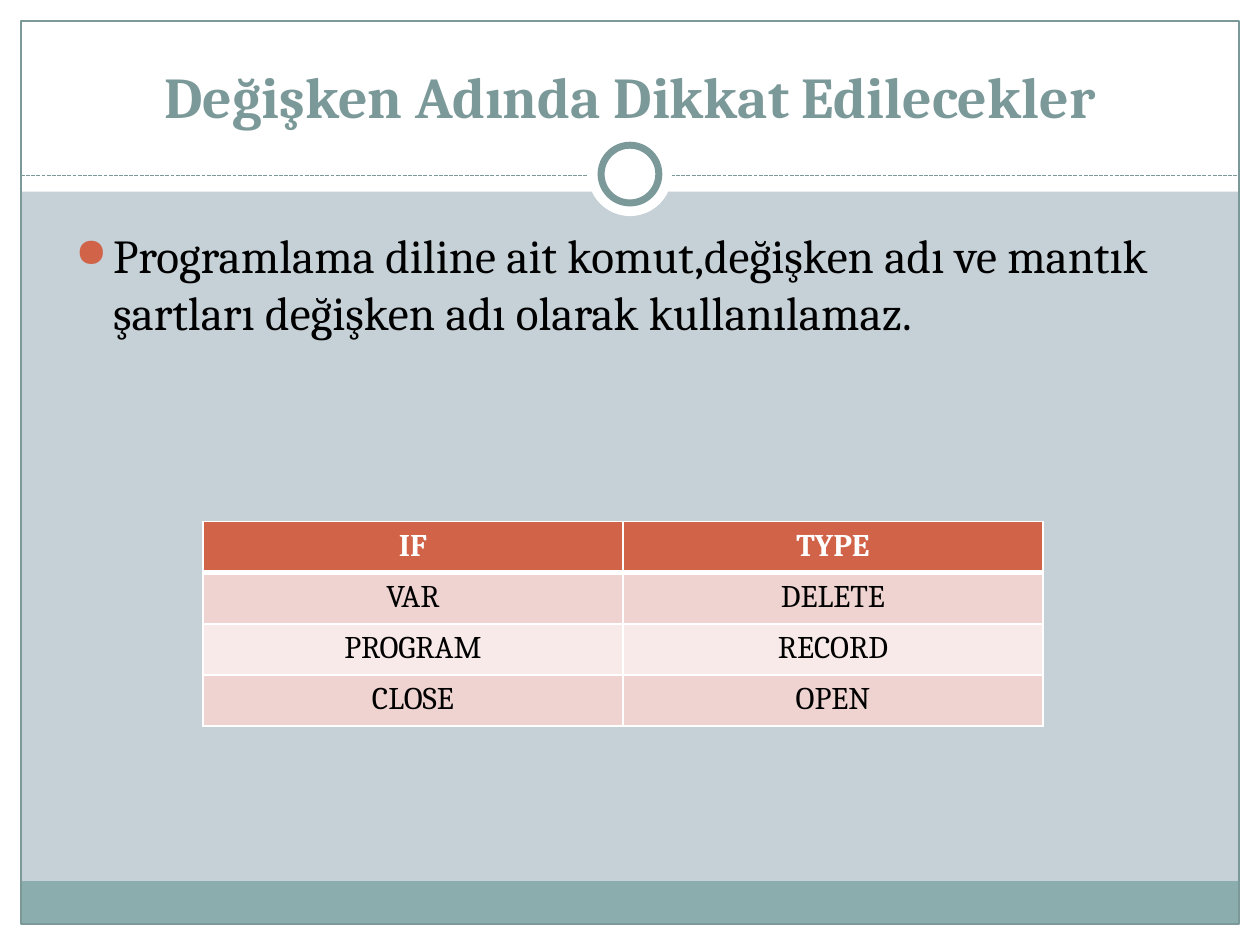
from dataclasses import dataclass

from lxml import etree
from pptx import Presentation
from pptx.dml.color import RGBColor
from pptx.enum.dml import MSO_LINE
from pptx.enum.shapes import MSO_CONNECTOR, MSO_SHAPE
from pptx.enum.text import MSO_ANCHOR, MSO_AUTO_SIZE, PP_ALIGN
from pptx.oxml.ns import qn
from pptx.util import Pt

RECT, OVAL = MSO_SHAPE.RECTANGLE, MSO_SHAPE.OVAL
STRAIGHT, DASH = MSO_CONNECTOR.STRAIGHT, MSO_LINE.SQUARE_DOT
LEFT, CENTER = PP_ALIGN.LEFT, PP_ALIGN.CENTER
TOP, BOTTOM = MSO_ANCHOR.TOP, MSO_ANCHOR.BOTTOM
FIXED = MSO_AUTO_SIZE.NONE


@dataclass(frozen=True)
class Theme:
    font: str = "Cambria"
    back: str = "C5D1D7"
    white: str = "FFFFFF"
    ink: str = "000000"
    line: str = "7C999A"
    band: str = "8CADAE"
    accent: str = "D16349"
    odd: str = "EED3D0"
    even: str = "F7EAE9"
    title: int = 33
    body: int = 27
    cell: int = 18


THEME = Theme()
WIDTH, HEIGHT = 720, 540
EDGE = 12
ROWS = [("IF", "TYPE"), ("VAR", "DELETE"), ("PROGRAM", "RECORD"), ("CLOSE", "OPEN")]


def rgb(color):
    return RGBColor.from_string(color)


def points(*box):
    return [Pt(value) for value in box]


def add_sub(parent, tag, **attrs):
    return etree.SubElement(parent, qn(tag), attrs)


def write(frame, text, size, color=THEME.ink, bold=False, align=LEFT, anchor=TOP):
    frame.vertical_anchor = anchor
    para = frame.paragraphs[0]
    para.alignment = align
    run = para.add_run()
    run.text = text
    font = run.font
    font.name, font.size, font.bold = THEME.font, Pt(size), bold
    font.color.rgb = rgb(color)
    return para


def draw(slide, kind, box, fill=None, line=None, weight=0.75):
    shape = slide.shapes.add_shape(kind, *points(*box))
    shape.shadow.inherit = False
    if fill:
        shape.fill.solid()
        shape.fill.fore_color.rgb = rgb(fill)
    else:
        shape.fill.background()
    if line:
        shape.line.color.rgb = rgb(line)
        shape.line.width = Pt(weight)
    else:
        shape.line.fill.background()


def add_frame(slide, box, head, foot):
    """Draw the white margins, header and footer bands, and outline."""
    x, y, w, h = box
    inner = (x + EDGE, y + EDGE, w - 2 * EDGE, h - 2 * EDGE)
    for part in [
        (x, y + h - EDGE, w, EDGE),
        (x, y, w, head),
        (x, y, EDGE, h),
        (x + w - EDGE, y, EDGE, h),
    ]:
        draw(slide, RECT, part, THEME.white)
    draw(slide, RECT, (inner[0], y + h - EDGE - foot, inner[2], foot), THEME.band)
    draw(slide, RECT, inner, line=THEME.line)


def add_rule(slide, box):
    """Draw the dashed rule with the ring at its middle."""
    x, y, w, h = box
    rule = slide.shapes.add_connector(STRAIGHT, *points(x, y + 25, x + w, y + 25))
    rule.line.color.rgb = rgb(THEME.line)
    rule.line.width = Pt(0.75)
    rule.line.dash_style = DASH
    add_sub(rule.element.spPr, "a:effectLst")
    left = x + (w - h) / 2
    draw(slide, OVAL, (left, y, h, h), THEME.white)
    gap = 7.5
    ring = (left + gap, y + gap, h - 2 * gap, h - 2 * gap)
    draw(slide, OVAL, ring, THEME.white, THEME.line, 4)


def add_title(slide, box, text):
    title = slide.shapes.title
    title.left, title.top, title.width, title.height = points(*box)
    title.text_frame.auto_size = FIXED
    write(title.text_frame, text, THEME.title, THEME.line, True, CENTER, BOTTOM)
    title.element.getparent().append(title.element)  # in front of the frame


def add_body(slide, box, text):
    frame = slide.shapes.add_textbox(*points(*box)).text_frame
    frame.word_wrap = True
    frame.auto_size = FIXED
    para = write(frame, text, THEME.body)
    para.space_before = Pt(0.2 * THEME.body)
    props = para._p.get_or_add_pPr()
    indent = Pt(21.6)
    props.set("marL", str(indent))
    props.set("indent", str(-indent))
    add_sub(add_sub(props, "a:buClr"), "a:srgbClr", val=THEME.accent)
    add_sub(props, "a:buSzPct", val="85000")
    add_sub(props, "a:buChar", char="●")


def add_borders(cell, **weights):
    props = cell._tc.get_or_add_tcPr()
    for side in "LRTB":
        line = add_sub(props, "a:ln" + side, w=str(Pt(weights.get(side, 1))))
        add_sub(add_sub(line, "a:solidFill"), "a:srgbClr", val=THEME.white)


def add_words(slide, box, rows):
    """Place the table of reserved words."""
    table = slide.shapes.add_table(len(rows), len(rows[0]), *points(*box)).table
    for r, row in enumerate(rows):
        table.rows[r].height = Pt(box[3] / len(rows))
        head = r == 0
        fill = THEME.accent if head else THEME.odd if r % 2 else THEME.even
        color = THEME.white if head else THEME.ink
        for c, word in enumerate(row):
            cell = table.cell(r, c)
            add_borders(cell, T=3 if r == 1 else 1, B=3 if head else 1)
            cell.fill.solid()
            cell.fill.fore_color.rgb = rgb(fill)
            write(cell.text_frame, word, THEME.cell, color, head, CENTER)


def main():
    deck = Presentation()
    deck.slide_width, deck.slide_height = points(WIDTH, HEIGHT)
    slide = deck.slides.add_slide(deck.slide_layouts[5])
    slide.background.fill.solid()
    slide.background.fill.fore_color.rgb = rgb(THEME.back)
    add_frame(slide, (0, 0, WIDTH, HEIGHT), head=109.5, foot=24.5)
    add_rule(slide, (EDGE, 75.5, WIDTH - 2 * EDGE, 48))
    add_title(slide, (24, 18, 672, 60), "Değişken Adında Dikkat Edilecekler")
    add_body(
        slide,
        (36, 126, 648, 257),
        "Programlama diline ait komut,değişken adı ve mantık "
        "şartları değişken adı olarak kullanılamaz.",
    )
    add_words(slide, (116, 298, 480, 117), ROWS)
    deck.save("out.pptx")


if __name__ == "__main__":
    main()
